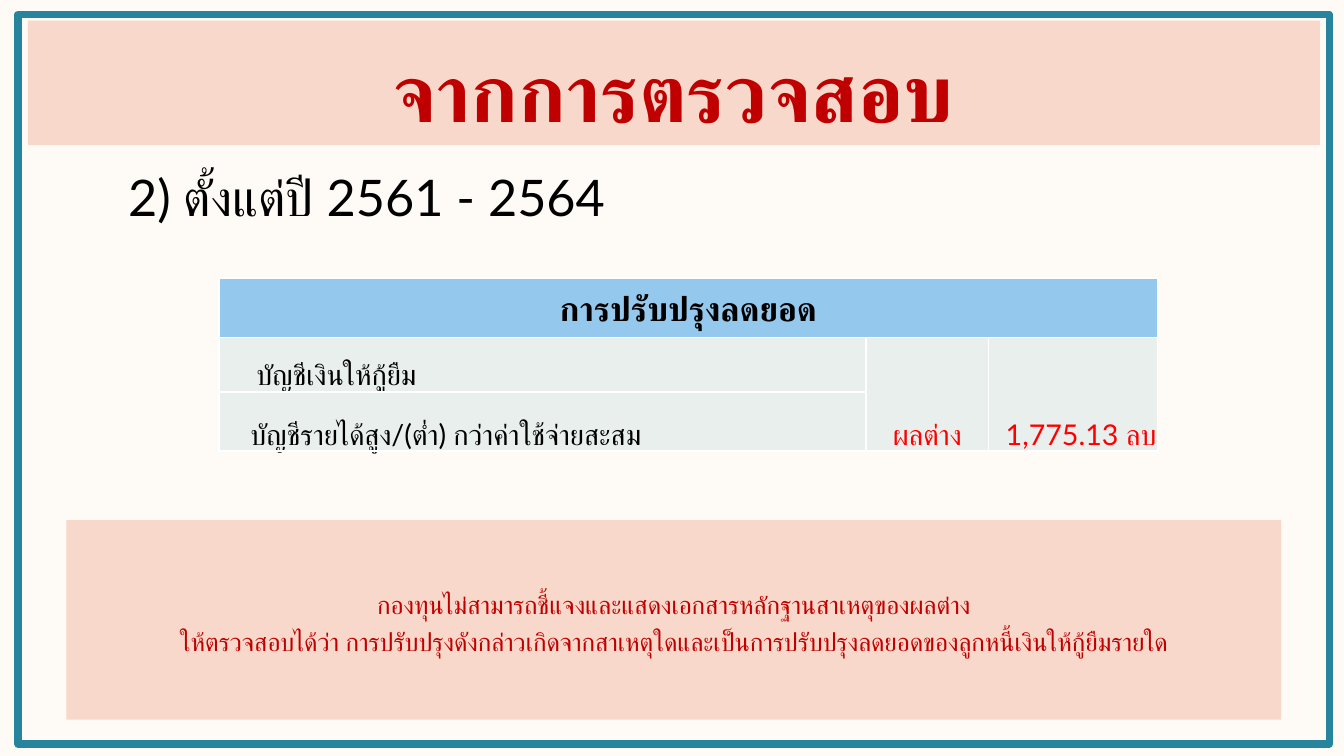
from lxml.etree import SubElement
from pptx import Presentation
from pptx.dml.color import RGBColor
from pptx.enum.shapes import MSO_SHAPE
from pptx.enum.text import MSO_ANCHOR, PP_ALIGN
from pptx.oxml.ns import qn
from pptx.util import Inches, Pt

COLORS = {
    "background": "FEFBF6", "frame": "26859D", "panel": "F8D8CA",
    "heading": "C00000", "text": "000000", "difference": "FF0000",
    "header": "94C8ED", "cell": "E8EFEC", "border": "FFFFFF",
}
FONT = "Lato"
CELL_INSETS = (0.01, 0.01, 0.01, 0)
TEXT_INSETS = (0.08, 0.04, 0.08, 0.04)


def color(name):
    """Return the named colour."""
    return RGBColor.from_string(COLORS[name])


def paint(target, name):
    """Fill a shape, cell or background with a named colour."""
    target.fill.solid()
    target.fill.fore_color.rgb = color(name)


def place(shape, box):
    """Move a shape to a box of left, top, width and height."""
    shape.left, shape.top, shape.width, shape.height = map(Inches, box)


def set_margins(target, insets):
    """Set left, top, right and bottom margins."""
    (target.margin_left, target.margin_top,
     target.margin_right, target.margin_bottom) = map(Inches, insets)


def write(frame, text, size, ink="text", bold=False, align=PP_ALIGN.LEFT, spacing=1.0):
    """Write one formatted paragraph per line of text."""
    frame.word_wrap = True
    for index, line in enumerate(text.split("\n")):
        para = frame.add_paragraph() if index else frame.paragraphs[0]
        para.alignment = align
        para.line_spacing = spacing
        para.space_before = Pt(0)
        span = para.add_run()
        span.text = line
        span.font.name = FONT
        span.font.size = Pt(size)
        span.font.bold = bold
        span.font.color.rgb = color(ink)
        SubElement(span.font._element, qn("a:cs"), typeface=FONT)


def add_rectangle(page, box):
    """Add a plain rectangle without shadow, fill or line."""
    shape = page.shapes.add_shape(MSO_SHAPE.RECTANGLE, *map(Inches, box))
    shape.shadow.inherit = False
    shape.fill.background()
    shape.line.fill.background()
    return shape


def add_frame(page, box):
    """Outline the page."""
    frame = add_rectangle(page, box)
    frame.line.color.rgb = color("frame")
    frame.line.width = Pt(4.5)


def add_title(page, box):
    """Format the title placeholder as a banner."""
    title = page.shapes.title
    place(title, box)
    paint(title, "panel")
    frame = title.text_frame
    frame.vertical_anchor = MSO_ANCHOR.BOTTOM
    set_margins(frame, TEXT_INSETS)
    write(frame, "จากการตรวจสอบ", 48, ink="heading", bold=True,
          align=PP_ALIGN.CENTER, spacing=0.9)


def add_period(page, box):
    """Add the line that names the period."""
    frame = page.shapes.add_textbox(*map(Inches, box)).text_frame
    frame.vertical_anchor = MSO_ANCHOR.BOTTOM
    set_margins(frame, (0.51,) + TEXT_INSETS[1:])
    write(frame, "2) ตั้งแต่ปี 2561 - 2564", 30, spacing=0.9)


def add_grid(page, box, widths, heights):
    """Add an unstyled table with the given column and row sizes."""
    table = page.shapes.add_table(len(heights), len(widths), *map(Inches, box)).table
    table.first_row = table.horz_banding = False
    for column, width in zip(table.columns, widths):
        column.width = Inches(width)
    for row, height in zip(table.rows, heights):
        row.height = Inches(height)
    return table


def fill_cell(cell, text, size, fill="cell", anchor=MSO_ANCHOR.BOTTOM, indent=0.01, **style):
    """Write and format one table cell."""
    cell.vertical_anchor = anchor
    set_margins(cell, (indent,) + CELL_INSETS[1:])
    write(cell.text_frame, text, size, **style)
    style_cell(cell, fill)


def style_cell(cell, fill):
    """Give a cell its borders and fill."""
    properties = cell._tc.get_or_add_tcPr()
    for side in ("lnL", "lnR", "lnT", "lnB"):
        line = SubElement(properties, qn(f"a:{side}"), w=str(Pt(1)))
        solid = SubElement(line, qn("a:solidFill"))
        SubElement(solid, qn("a:srgbClr"), val=COLORS["border"])
    paint(cell, fill)


def add_adjustments(page, box):
    """Add the header table and the accounts table below it."""
    left, top, width, height = box
    header_height = 0.49
    accounts = add_grid(page, (left, top + header_height, width, height - header_height),
                        (5.35, 1.01, 1.4), (0.45, 0.49))
    labels = (("บัญชีเงินให้กู้ยืม", 0.31), ("บัญชีรายได้สูง/(ต่ำ) กว่าค่าใช้จ่ายสะสม", 0.26))
    for row, (label, indent) in enumerate(labels):
        fill_cell(accounts.cell(row, 0), label, 17, indent=indent)
    results = (("ผลต่าง", PP_ALIGN.CENTER), ("1,775.13 ลบ", PP_ALIGN.RIGHT))
    for column, (label, align) in enumerate(results, start=1):
        accounts.cell(0, column).merge(accounts.cell(1, column))
        fill_cell(accounts.cell(0, column), label, 17, ink="difference", align=align)
        style_cell(accounts.cell(1, column), "cell")
    header = add_grid(page, (left, top, width, header_height), (width,), (header_height,))
    fill_cell(header.cell(0, 0), "การปรับปรุงลดยอด", 20, fill="header",
              anchor=MSO_ANCHOR.MIDDLE, bold=True, align=PP_ALIGN.CENTER)


def add_conclusion(page, box):
    """Add the panel with the finding."""
    panel = add_rectangle(page, box)
    paint(panel, "panel")
    panel.text_frame.vertical_anchor = MSO_ANCHOR.MIDDLE
    write(panel.text_frame,
          "กองทุนไม่สามารถชี้แจงและแสดงเอกสารหลักฐานสาเหตุของผลต่าง\n"
          "ให้ตรวจสอบได้ว่า การปรับปรุงดังกล่าวเกิดจากสาเหตุใด"
          "และเป็นการปรับปรุงลดยอดของลูกหนี้เงินให้กู้ยืมรายใด",
          15, ink="heading", align=PP_ALIGN.CENTER, spacing=1.2)


def main():
    """Build and save the deck."""
    deck = Presentation()
    deck.slide_width, deck.slide_height = Inches(11.11), Inches(6.25)
    page = deck.slides.add_slide(deck.slide_layouts[5])
    paint(page.background, "background")
    add_frame(page, (0.15, 0.12, 10.84, 6.03))
    add_title(page, (0.23, 0.17, 10.68, 1.03))
    add_period(page, (0.55, 0.85, 10.04, 1.07))
    add_adjustments(page, (1.81, 2.3, 7.76, 1.43))
    add_conclusion(page, (0.55, 4.3, 10.04, 1.65))
    deck.save("out.pptx")


if __name__ == "__main__":
    main()
